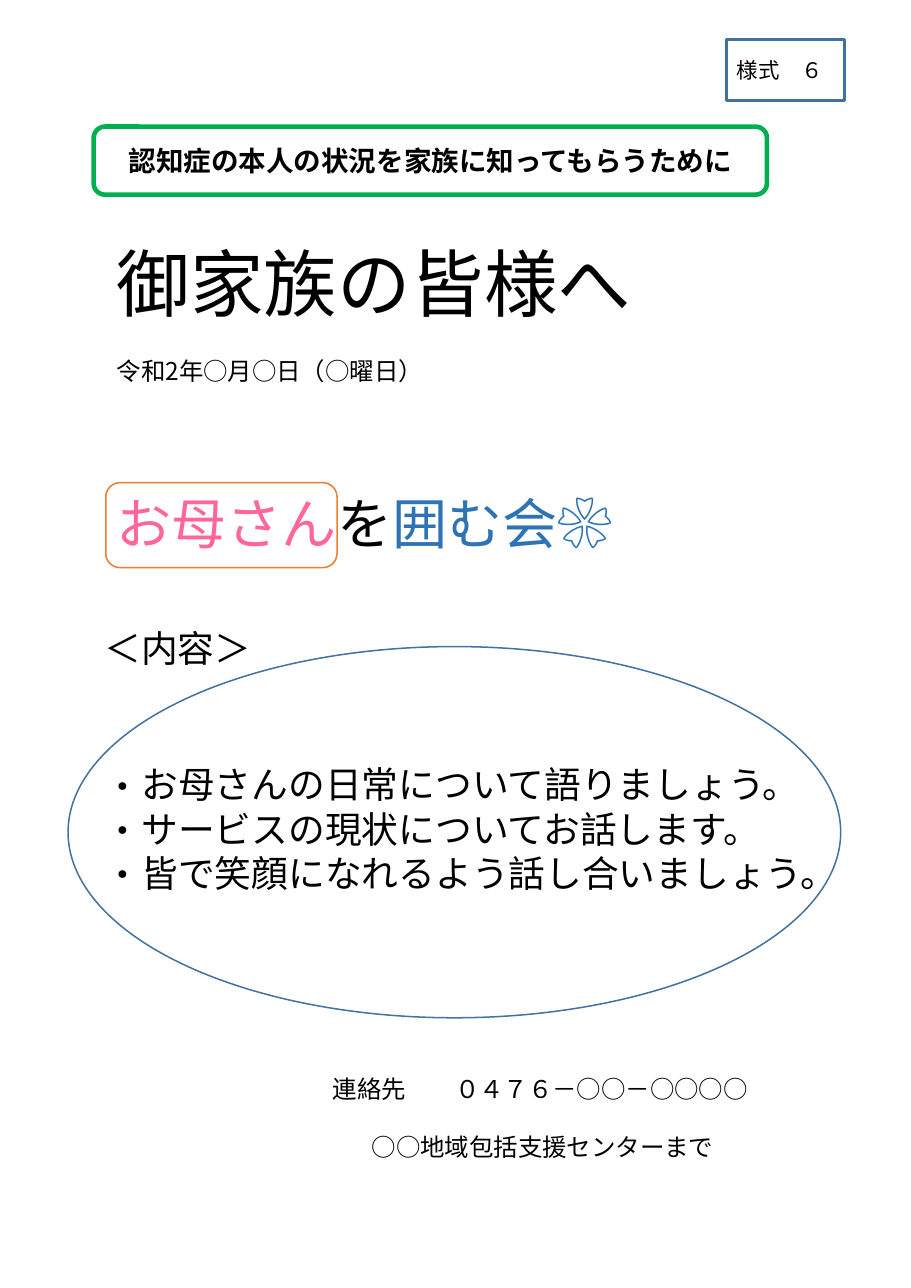
from pptx import Presentation
from pptx.dml.color import RGBColor
from pptx.enum.shapes import MSO_SHAPE
from pptx.enum.text import MSO_ANCHOR, MSO_AUTO_SIZE, PP_ALIGN
from pptx.oxml.xmlchemy import OxmlElement
from pptx.util import Cm, Pt

RECT = MSO_SHAPE.RECTANGLE
ROUNDED = MSO_SHAPE.ROUNDED_RECTANGLE
OVAL = MSO_SHAPE.OVAL
MIDDLE = MSO_ANCHOR.MIDDLE
NO_AUTOFIT = MSO_AUTO_SIZE.NONE
LEFT, CENTER = PP_ALIGN.LEFT, PP_ALIGN.CENTER

JAPANESE = "Noto Sans CJK JP"
BLACK, WHITE = "000000", "FFFFFF"
PINK, BLUE = "FF6699", "2E74B5"

TOPICS = [
    "お母さんの日常について語りましょう。",
    "サービスの現状についてお話します。",
    "皆で笑顔になれるよう話し合いましょう。",
]


def color(hex_code):
    return RGBColor.from_string(hex_code)


def format_paragraph(paragraph, size, align=LEFT, bold=False, latin=JAPANESE):
    """Set alignment and fonts, including the East Asian typeface."""
    paragraph.alignment = align
    font = paragraph.font
    font.size, font.bold, font.name = Pt(size), bold, latin
    font.color.rgb = color(BLACK)
    east_asian = OxmlElement("a:ea")
    east_asian.set("typeface", JAPANESE)
    paragraph._p.get_or_add_pPr().get_or_add_defRPr().append(east_asian)


def add_bullet(paragraph, size):
    properties = paragraph._p.get_or_add_pPr()
    properties.set("marL", str(Pt(size)))
    properties.set("indent", str(-Pt(size)))
    for tag, attribute, value in (("a:buFont", "typeface", JAPANESE),
                                  ("a:buChar", "char", "・")):
        element = OxmlElement(tag)
        element.set(attribute, value)
        properties.append(element)


def add_frame(slide, kind, left, top, width, height, line, weight, fill=WHITE):
    frame = slide.shapes.add_shape(kind, Cm(left), Cm(top), Cm(width), Cm(height))
    frame.shadow.inherit = False
    if fill:
        frame.fill.solid()
        frame.fill.fore_color.rgb = color(fill)
    else:
        frame.fill.background()
    frame.line.color.rgb = color(line)
    frame.line.width = Pt(weight)
    return frame


def label_frame(frame, text, size, align=LEFT, bold=False):
    frame.text_frame.vertical_anchor = MIDDLE
    frame.text_frame.text = text
    format_paragraph(frame.text_frame.paragraphs[0], size, align, bold)


def add_line(slide, left, middle, width, size, *parts):
    """Add one line of text centred on a height; parts are (text, colour)."""
    height = 2
    box = slide.shapes.add_textbox(Cm(left), Cm(middle - height / 2),
                                   Cm(width), Cm(height))
    box.text_frame.word_wrap = True
    box.text_frame.vertical_anchor = MIDDLE
    paragraph = box.text_frame.paragraphs[0]
    format_paragraph(paragraph, size)
    for text, hex_code in parts:
        run = paragraph.add_run()
        run.text = text
        if hex_code != BLACK:
            run.font.color.rgb = color(hex_code)


def place_placeholder(slide, placeholder, left, top, width, height):
    """Move a placeholder on the page and bring it to the front."""
    placeholder.left, placeholder.top = Cm(left), Cm(top)
    placeholder.width, placeholder.height = Cm(width), Cm(height)
    slide.shapes._spTree.append(placeholder._element)
    frame = placeholder.text_frame
    frame.word_wrap = True
    frame.auto_size = NO_AUTOFIT
    frame.vertical_anchor = MIDDLE
    return frame


def fill_title(slide, text):
    frame = place_placeholder(slide, slide.shapes.title, 2.44, 5, 14, 3)
    frame.text = text
    format_paragraph(frame.paragraphs[0], 48, latin="Arial")


def fill_topics(slide, topics, size=24):
    frame = place_placeholder(slide, slide.placeholders[1], 2.16, 17.1, 18.2, 4)
    frame.text = "\n".join(topics)
    for paragraph in frame.paragraphs:
        add_bullet(paragraph, size)
        format_paragraph(paragraph, size)
        paragraph.line_spacing = Pt(29)
        paragraph.space_before = Pt(0)


def main():
    presentation = Presentation()
    presentation.slide_width, presentation.slide_height = Cm(21), Cm(29.7)
    slide = presentation.slides.add_slide(presentation.slide_layouts[1])

    # Frames behind the text
    add_frame(slide, OVAL, 1.57, 14.91, 17.81, 8.56, "43739E", 1)
    add_frame(slide, ROUNDED, 2.44, 11.13, 5.33, 1.96, "ED7D31", 1)

    # Form number and banner
    form_number = add_frame(slide, RECT, 16.74, 0.91, 2.72, 1.42, "41719C", 2, None)
    label_frame(form_number, "様式　６", 14)
    banner = add_frame(slide, ROUNDED, 2.16, 2.92, 15.52, 1.57, "00B050", 3)
    label_frame(banner, "認知症の本人の状況を家族に知ってもらうために", 18, CENTER, True)

    # Addressees, date and name of the gathering
    fill_title(slide, "御家族の皆様へ")
    add_line(slide, 2.44, 8.56, 12, 16, ("令和2年○月○日（○曜日）", BLACK))
    add_line(slide, 2.44, 12.04, 16, 36,
             ("お母さん", PINK), ("を", BLACK), ("囲む会❀", BLUE))

    # Topics
    add_line(slide, 2.16, 14.94, 6, 24, ("＜内容＞", BLACK))
    fill_topics(slide, TOPICS)

    # Contact
    add_line(slide, 7.42, 25.1, 3, 16, ("連絡先", BLACK))
    add_line(slide, 10.24, 25.1, 9, 16, ("０４７６－○○－○○○○", BLACK))
    add_line(slide, 8.32, 26.44, 10, 16, ("○○地域包括支援センターまで", BLACK))

    presentation.save("out.pptx")


if __name__ == "__main__":
    main()
